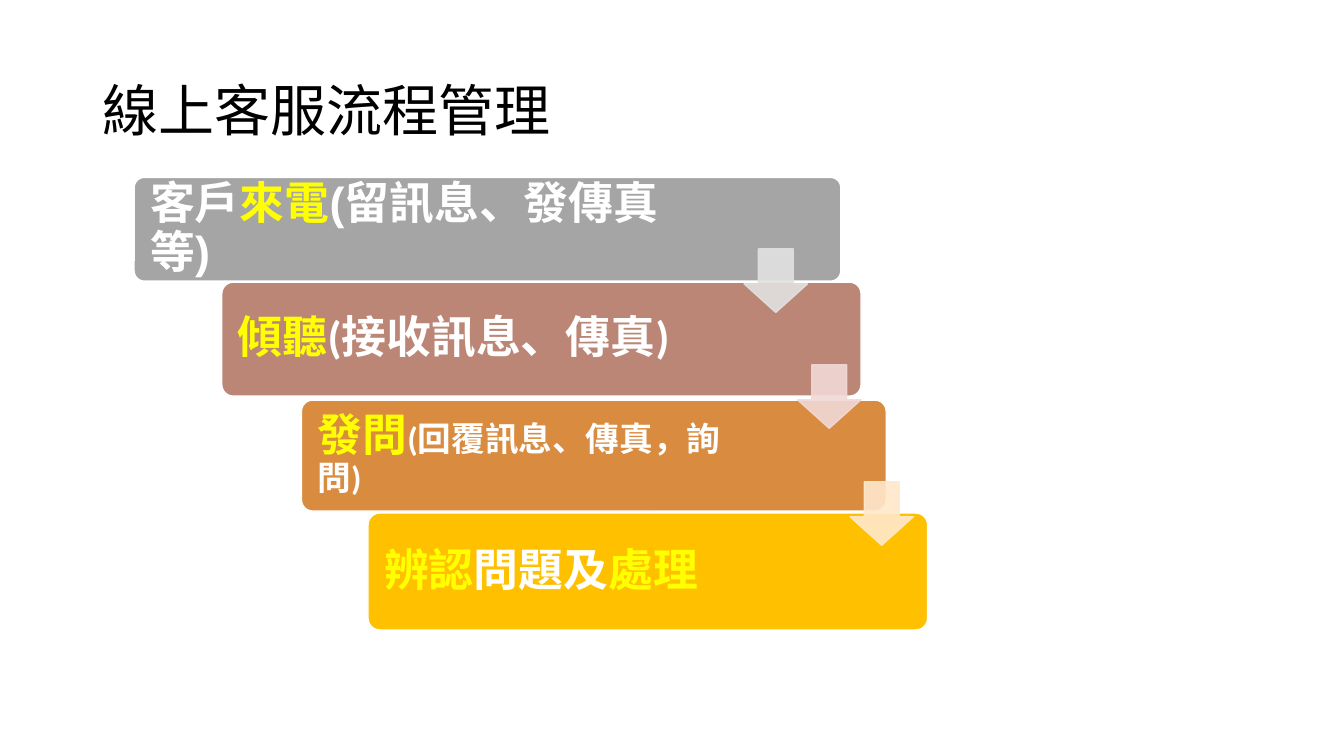
from lxml import etree
from pptx import Presentation
from pptx.dml.color import RGBColor
from pptx.enum.shapes import MSO_SHAPE
from pptx.enum.text import MSO_ANCHOR, PP_ALIGN
from pptx.oxml.ns import qn
from pptx.util import Inches, Pt

ROUNDED = MSO_SHAPE.ROUNDED_RECTANGLE
DOWN_ARROW = MSO_SHAPE.DOWN_ARROW
MIDDLE = MSO_ANCHOR.MIDDLE
LEFT = PP_ALIGN.LEFT

COLORS = {
    "black": "000000", "white": "FFFFFF", "yellow": "FFFF00",
    "grey": "A5A5A5", "rose": "BB8676", "orange": "D98B3F", "gold": "FFC000",
    "pale grey": "E1E1E1", "pale rose": "F1D9D5", "pale orange": "FFE8CB",
}
ASIAN_FONT = "Noto Sans CJK SC"
ARROW_SIZE = 0.63
ARROW_OPACITY = 90
CAPTION_MARGIN = 0.03

# Each step: place, fill, font, spans of (text, colour, size)
STEPS = [
    ((1.33, 1.76, 7.01, 1.03), 5.76, "grey", "Arial",
     [("客戶", "white", 32), ("來電", "yellow", 32), ("(留訊息、發傳真等)", "white", 32)]),
    ((2.2, 2.8, 6.34, 1.13), 5.11, "rose", "Calibri",
     [("傾聽", "yellow", 32), ("(接收訊息、傳真)", "white", 32)]),
    ((2.99, 3.97, 5.8, 1.1), 4.68, "orange", "Calibri",
     [("發問", "yellow", 32), ("(回覆訊息、傳真，詢問)", "white", 24)]),
    ((3.65, 5.09, 5.55, 1.16), 4.46, "gold", "Calibri",
     [("辨認", "yellow", 32), ("問題及", "white", 32), ("處理", "yellow", 32)]),
]
ARROWS = [(7.38, 2.47, "pale grey"), (7.91, 3.62, "pale rose"), (8.43, 4.78, "pale orange")]


class SlideBuilder:
    def __init__(self, page):
        self.page = page

    def span(self, para, text, color, size, font, bold):
        span = para.add_run()
        span.text = text
        values = {"name": font, "size": Pt(size), "bold": bold}
        for name, value in values.items():
            setattr(span.font, name, value)
        span.font.color.rgb = RGBColor.from_string(COLORS[color])
        asian = etree.SubElement(span.font._element, qn("a:ea"))
        asian.set("typeface", ASIAN_FONT)

    def place(self, box, left, top, width, height):
        values = {"left": left, "top": top, "width": width, "height": height}
        for name, value in values.items():
            setattr(box, name, Inches(value))

    def title(self, text):
        box = self.page.shapes.title
        self.place(box, 0.92, 0.4, 11.5, 1.45)
        box.text_frame.vertical_anchor = MIDDLE
        para = box.text_frame.paragraphs[0]
        para.alignment = LEFT
        para.line_spacing = 0.9
        self.span(para, text, "black", 40, ASIAN_FONT, False)

    def shape(self, kind, place, adjustments, fill, line, opacity=100):
        shape = self.page.shapes.add_shape(kind, *map(Inches, place))
        shape.shadow.inherit = False
        for index, value in enumerate(adjustments):
            shape.adjustments[index] = value
        shape.fill.solid()
        shape.fill.fore_color.rgb = RGBColor.from_string(COLORS[fill])
        shape.line.color.rgb = RGBColor.from_string(COLORS[line])
        shape.line.width = Pt(1)
        if opacity < 100:
            for color in shape._element.spPr.iter(qn("a:srgbClr")):
                etree.SubElement(color, qn("a:alpha")).set("val", str(opacity * 1000))

    def caption(self, place, font, spans):
        box = self.page.shapes.add_textbox(*map(Inches, place))
        frame = box.text_frame
        values = {"word_wrap": True, "vertical_anchor": MIDDLE}
        for side in ("left", "top", "right", "bottom"):
            values[f"margin_{side}"] = Inches(0.13)
        for name, value in values.items():
            setattr(frame, name, value)
        para = frame.paragraphs[0]
        para.line_spacing = 0.9
        for text, color, size in spans:
            self.span(para, text, color, size, font, True)

    def step(self, place, caption_width, fill, font, spans):
        left, top, _, height = place
        self.shape(ROUNDED, place, [0.1], fill, "white")
        caption_place = (left + CAPTION_MARGIN, top + CAPTION_MARGIN,
                         caption_width, height - 2 * CAPTION_MARGIN)
        self.caption(caption_place, font, spans)

    def arrow(self, left, top, color):
        place = (left, top, ARROW_SIZE, ARROW_SIZE)
        self.shape(DOWN_ARROW, place, [0.55, 0.45], color, color, ARROW_OPACITY)


def main():
    deck = Presentation()
    deck.slide_width = Inches(13.33)
    deck.slide_height = Inches(7.5)
    builder = SlideBuilder(deck.slides.add_slide(deck.slide_layouts[5]))

    # Heading
    builder.title("線上客服流程管理")

    # Staircase of steps
    for step in STEPS:
        builder.step(*step)

    # Arrows between the steps
    for arrow in ARROWS:
        builder.arrow(*arrow)

    deck.save("out.pptx")


if __name__ == "__main__":
    main()
